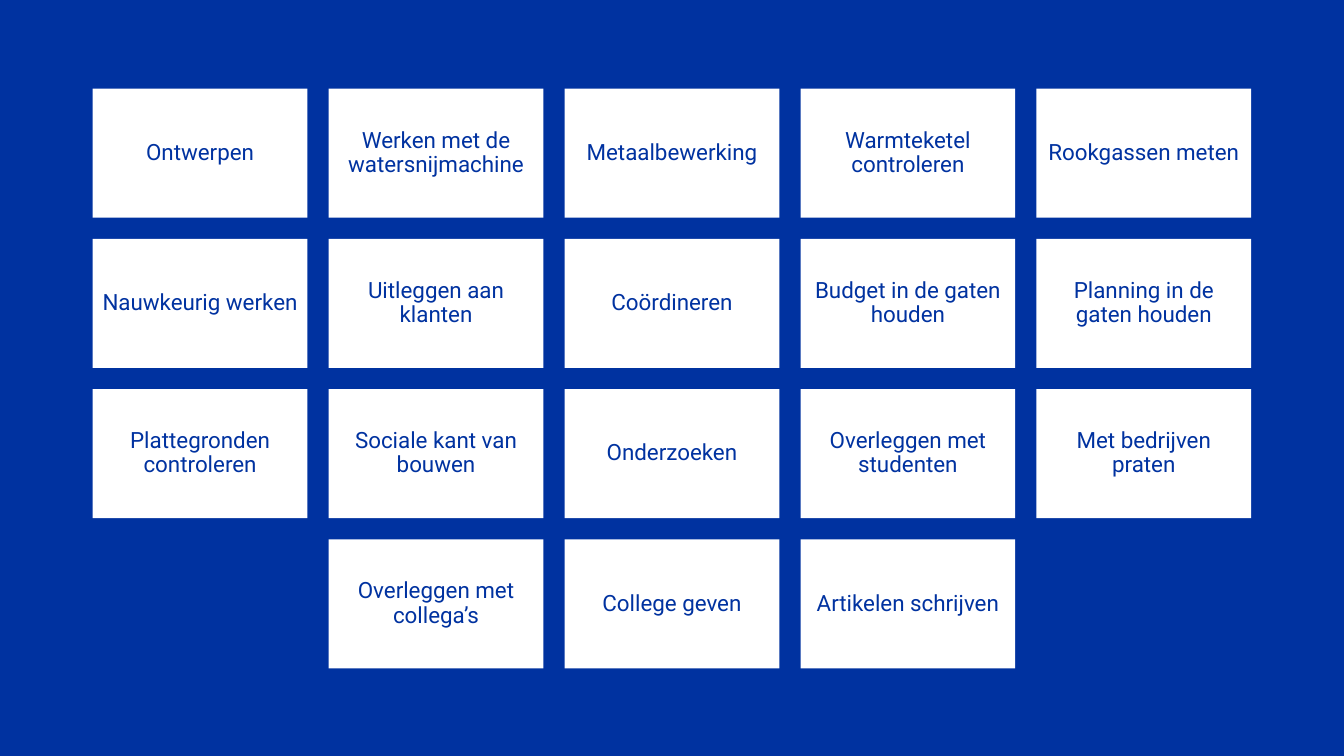
from dataclasses import dataclass

from pptx import Presentation
from pptx import util as u
from pptx.dml.color import RGBColor
from pptx.enum import shapes, text
from pptx.shapes.autoshape import Shape
from pptx.slide import Slide

BLUE = RGBColor(0x00, 0x32, 0xA0)
WHITE = RGBColor(0xFF, 0xFF, 0xFF)

PAGE_WIDTH, PAGE_HEIGHT = 13.33, 7.5
CARD_WIDTH, CARD_HEIGHT = 2.13, 1.28
GAP = 0.21
LEFT, TOP = 0.92, 0.88
INSET = u.Inches(0.07)

FRAME_FORMAT = {
    "word_wrap": True,
    "vertical_anchor": text.MSO_ANCHOR.MIDDLE,
    "margin_left": INSET,
    "margin_right": INSET,
    "margin_top": INSET,
    "margin_bottom": INSET,
}
PARA_FORMAT = {"alignment": text.PP_ALIGN.CENTER, "line_spacing": 0.9}
FONT_FORMAT = {"name": "Roboto", "size": u.Pt(16)}


@dataclass(frozen=True)
class CardRow:
    first_column: int
    labels: tuple[str, ...]


ROWS = (
    CardRow(0, ("Ontwerpen", "Werken met de watersnijmachine", "Metaalbewerking",
                "Warmteketel controleren", "Rookgassen meten")),
    CardRow(0, ("Nauwkeurig werken", "Uitleggen aan klanten", "Coördineren",
                "Budget in de gaten houden", "Planning in de gaten houden")),
    CardRow(0, ("Plattegronden controleren", "Sociale kant van bouwen", "Onderzoeken",
                "Overleggen met studenten", "Met bedrijven praten")),
    CardRow(1, ("Overleggen met collega’s", "College geven", "Artikelen schrijven")),
)


def apply_format(target: object, values: dict[str, object]) -> None:
    for name, value in values.items():
        setattr(target, name, value)


def add_box(page: Slide, left: float, top: float, width: float, height: float,
            color: RGBColor) -> Shape:
    box = page.shapes.add_shape(
        shapes.MSO_SHAPE.RECTANGLE,
        u.Inches(left), u.Inches(top), u.Inches(width), u.Inches(height))
    box.shadow.inherit = False
    box.fill.solid()
    box.fill.fore_color.rgb = color
    box.line.fill.background()
    return box


def add_card(page: Slide, column: int, row: int, label: str) -> None:
    box = add_box(page, LEFT + column * (CARD_WIDTH + GAP),
                  TOP + row * (CARD_HEIGHT + GAP), CARD_WIDTH, CARD_HEIGHT, WHITE)
    apply_format(box.text_frame, FRAME_FORMAT)
    para = box.text_frame.paragraphs[0]
    apply_format(para, PARA_FORMAT)
    span = para.add_run()
    span.text = label
    apply_format(span.font, FONT_FORMAT)
    span.font.color.rgb = BLUE


def main() -> None:
    deck = Presentation()
    deck.slide_width = u.Inches(PAGE_WIDTH)
    deck.slide_height = u.Inches(PAGE_HEIGHT)
    page = deck.slides.add_slide(deck.slide_layouts[6])

    # Blue backdrop
    add_box(page, 0, 0, PAGE_WIDTH, PAGE_HEIGHT, BLUE)

    # Activity cards
    for row, card_row in enumerate(ROWS):
        for column, label in enumerate(card_row.labels, card_row.first_column):
            add_card(page, column, row, label)

    deck.save("out.pptx")


if __name__ == "__main__":
    main()
